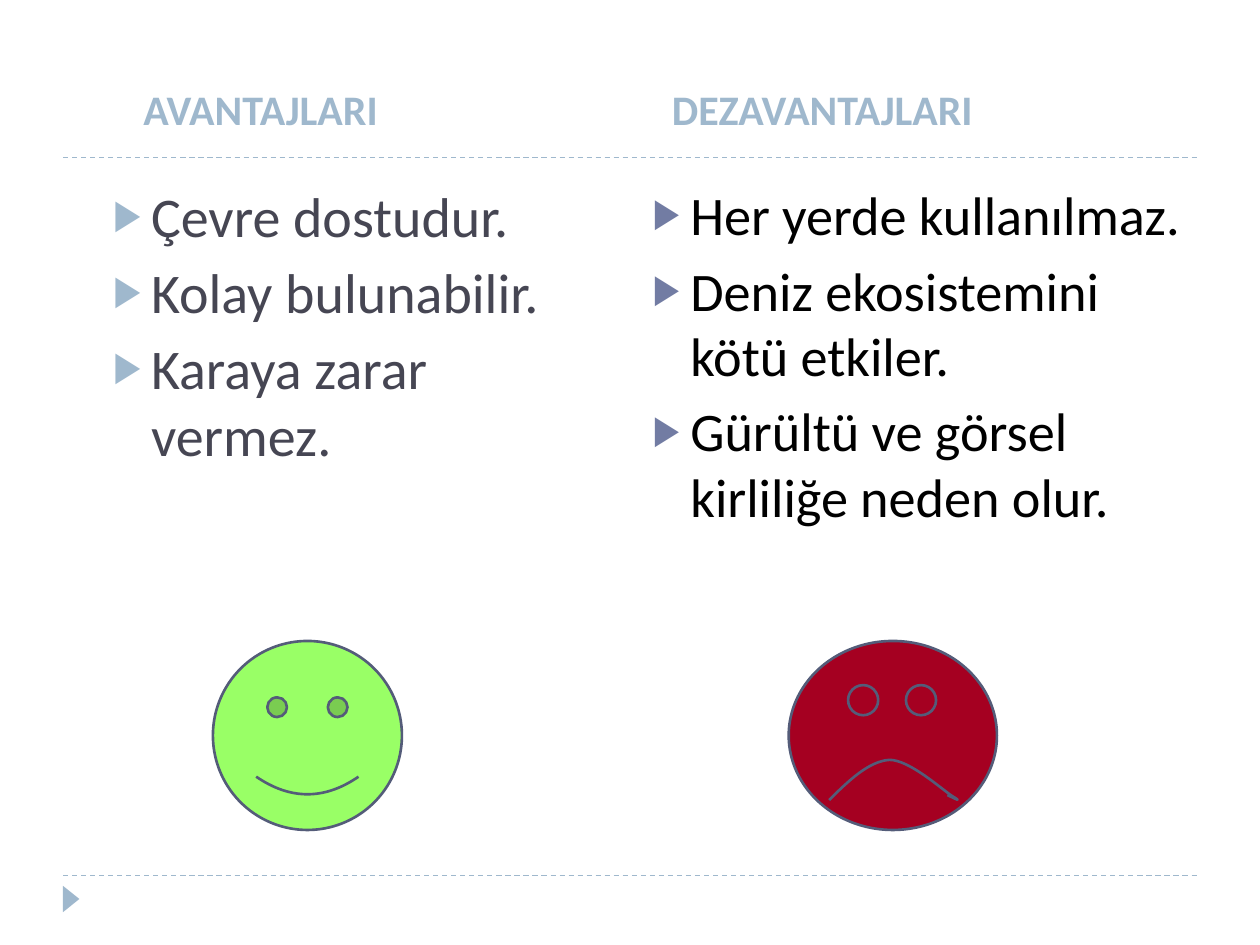
from lxml import etree
from pptx import Presentation
from pptx import util as u
from pptx.dml.color import RGBColor
from pptx.enum import dml, shapes, text
from pptx.oxml.ns import qn

PALE, OUTLINE, RED = "9FB8CD", "545C79", "A50021"


def colour(value):
    return RGBColor.from_string(value)


def bezier(start, first, second, end, steps=16):
    for step in range(1, steps + 1):
        t = step / steps
        weights = ((1 - t) ** 3, 3 * t * (1 - t) ** 2, 3 * t * t * (1 - t), t ** 3)
        yield tuple(sum(w * p[axis] for w, p in zip(weights, (start, first, second, end)))
                    for axis in (0, 1))


class Painter:
    """Holds the slide and its shared style, and draws each kind of element."""

    font = "Calibri"
    line_width = 1.5
    indent = 21.6

    def __init__(self, slide):
        self.shapes = slide.shapes

    def rule(self, y, left=36, right=684):
        line = self.shapes.add_connector(
            shapes.MSO_CONNECTOR.STRAIGHT, u.Pt(left), u.Pt(y), u.Pt(right), u.Pt(y))
        line.line.color.rgb = colour(PALE)
        line.line.width = u.Pt(0.75)
        line.line.dash_style = dml.MSO_LINE.DASH
        etree.SubElement(line._element.spPr, qn("a:effectLst"))

    def outline(self, shape):
        shape.shadow.inherit = False
        shape.line.color.rgb = colour(OUTLINE)
        shape.line.width = u.Pt(self.line_width)

    def shape(self, kind, left, top, width, height, fill, outlined=True):
        shape = self.shapes.add_shape(kind, *map(u.Pt, (left, top, width, height)))
        shape.fill.solid()
        shape.fill.fore_color.rgb = colour(fill)
        if outlined:
            self.outline(shape)
        else:
            shape.shadow.inherit = False
            shape.line.fill.background()
        return shape

    def curve(self, start, segments):
        points = [start]
        for segment in segments:
            points.extend(bezier(points[-1], *segment))
        pairs = [(u.Pt(x), u.Pt(y)) for x, y in points]
        builder = self.shapes.build_freeform(*pairs[0])
        builder.add_line_segments(pairs[1:], close=False)
        curve = builder.convert_to_shape()
        curve.fill.background()
        self.outline(curve)

    def text(self, left, top, height, lines, size, ink, before, margin=0,
             bullet=None, bold=False, anchor=text.MSO_ANCHOR.TOP):
        box = self.shapes.add_textbox(*map(u.Pt, (left, top, 318.24, height)))
        frame = box.text_frame
        frame.word_wrap = True
        frame.vertical_anchor = anchor
        frame.text = "\n".join(lines)
        for para in frame.paragraphs:
            para.space_before = u.Pt(before)
            props = para._p.get_or_add_pPr()
            props.set("marL", str(u.Pt(margin)))
            if bullet:
                self.bullet(props, bullet)
            para.font.name = self.font
            para.font.size = u.Pt(size)
            para.font.bold = bold
            para.font.color.rgb = colour(ink)

    def bullet(self, props, ink):
        props.set("indent", str(-u.Pt(self.indent)))
        tint = etree.SubElement(props, qn("a:buClr"))
        etree.SubElement(tint, qn("a:srgbClr"), val=ink)
        etree.SubElement(props, qn("a:buSzPct"), val="76000")
        etree.SubElement(props, qn("a:buFont"), typeface=self.font)
        etree.SubElement(props, qn("a:buChar"), char="▶")


def main():
    deck = Presentation()
    deck.slide_width, deck.slide_height = u.Pt(720), u.Pt(540)
    painter = Painter(deck.slides.add_slide(deck.slide_layouts[6]))
    kinds = shapes.MSO_SHAPE

    for y in (500.4, 90):
        painter.rule(y)
    marker = painter.shape(kinds.ISOSCELES_TRIANGLE, 33.1, 509, 15.1, 9.4, PALE, outlined=False)
    marker.rotation = 90

    for left, margin, heading in ((36.6, 38.2, "AVANTAJLARI"), (365.8, 11, "DEZAVANTAJLARI")):
        painter.text(left, 26, 54, [heading], 24, PALE, 6, margin,
                     bold=True, anchor=text.MSO_ANCHOR.BOTTOM)

    painter.text(36, 100, 215.3,
                 ["Çevre dostudur.", "Kolay bulunabilir.", "Karaya zarar vermez."],
                 32, "464653", 5, margin=2 * painter.indent, bullet=PALE)
    painter.text(365.8, 100, 386,
                 ["Her yerde kullanılmaz.", "Deniz ekosistemini kötü etkiler.",
                  "Gürültü ve görsel kirliliğe neden olur."],
                 31, "000000", 6, margin=painter.indent, bullet="727CA3")

    painter.shape(kinds.SMILEY_FACE, 121.7, 366.3, 108, 108, "99FF66")
    painter.shape(kinds.OVAL, 450.7, 366.3, 119, 108, RED)
    for left in (484.6, 517.7):
        painter.shape(kinds.OVAL, left, 391.5, 17.2, 17.2, RED)
    painter.curve((473.8, 457.2), [
        ((485.3, 445.7), (496.8, 434.9), (508.3, 434.2)),
        ((519.8, 434.2), (538.6, 451.4), (544.3, 455)),
        ((550.1, 458.6), (545.8, 456.5), (541.4, 454.3)),
    ])

    deck.save("out.pptx")


if __name__ == "__main__":
    main()
